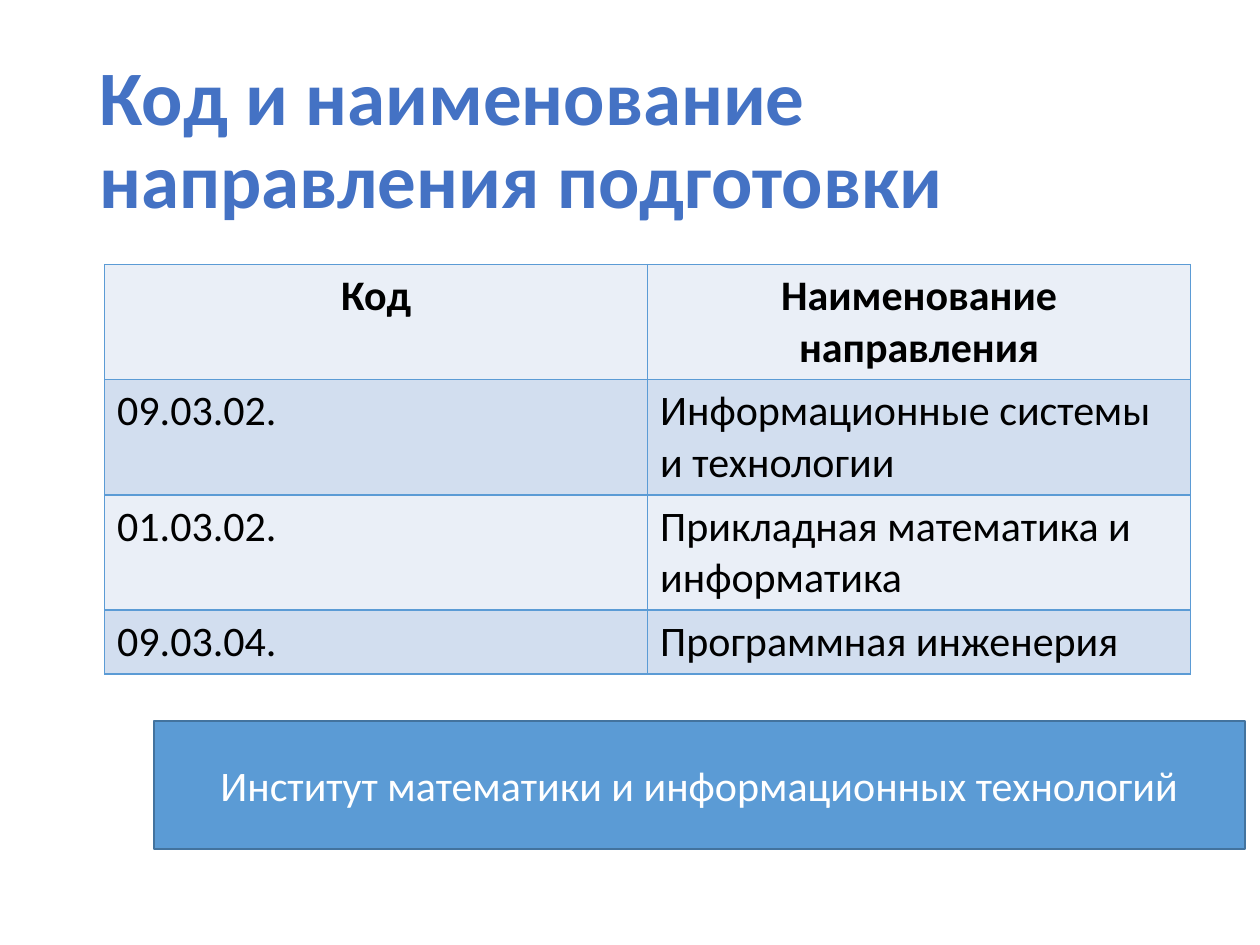
from pptx import Presentation
from pptx.dml.color import RGBColor
from pptx.enum.shapes import MSO_SHAPE as Shape
from pptx.enum.text import MSO_ANCHOR as Anchor, PP_ALIGN as Align
from pptx.oxml import parse_xml
from pptx.oxml.ns import nsdecls
from pptx.util import Inches, Pt

COLORS = {
    "title": "4472C4",
    "accent": "5B9BD5",
    "outline": "43739E",
    "light": "EAEFF7",
    "band": "D2DEEF",
    "text": "000000",
    "white": "FFFFFF",
}
DIRECTIONS = [
    ("Код", "Наименование направления"),
    ("09.03.02.", "Информационные системы и технологии"),
    ("01.03.02.", "Прикладная математика и информатика"),
    ("09.03.04.", "Программная инженерия"),
]
ROW_HEIGHTS = [0.91, 0.91, 0.91, 0.5]


def color(name):
    return RGBColor.from_string(COLORS[name])


def write(frame, text, size=24, ink="text", bold=False, align=Align.LEFT,
          anchor=Anchor.TOP, spacing=1.0):
    frame.word_wrap = True
    frame.vertical_anchor = anchor
    paragraph = frame.paragraphs[0]
    paragraph.alignment = align
    paragraph.line_spacing = spacing
    run = paragraph.add_run()
    run.text = text
    run.font.name = "Calibri"
    run.font.size = Pt(size)
    run.font.bold = bold
    run.font.color.rgb = color(ink)


class DirectionSlide:
    """Holds the style and the current slide, and adds its elements."""

    def __init__(self, presentation):
        self.slide = presentation.slides.add_slide(presentation.slide_layouts[5])

    def title(self, text, left, top, width, height):
        shape = self.slide.shapes.title
        shape.left, shape.top = Inches(left), Inches(top)
        shape.width, shape.height = Inches(width), Inches(height)
        write(shape.text_frame, text, size=44, ink="title", bold=True,
              anchor=Anchor.MIDDLE, spacing=0.9)

    def border(self, cell):
        properties = cell._tc.get_or_add_tcPr()
        for index, side in enumerate(("lnL", "lnR", "lnT", "lnB")):
            properties.insert(index, parse_xml(
                f'<a:{side} {nsdecls("a")} w="{Pt(1)}"><a:solidFill>'
                f'<a:srgbClr val="{COLORS["accent"]}"/></a:solidFill></a:{side}>'))

    def table(self, rows, heights, left, top, width):
        columns = len(rows[0])
        frame = self.slide.shapes.add_table(
            len(rows), columns, Inches(left), Inches(top),
            Inches(width), Inches(sum(heights)))
        table = frame.table
        for column in table.columns:
            column.width = Inches(width / columns)
        for index, (texts, height) in enumerate(zip(rows, heights)):
            table.rows[index].height = Inches(height)
            header = index == 0
            for cell, text in zip(table.rows[index].cells, texts):
                cell.fill.solid()
                cell.fill.fore_color.rgb = color("band" if index % 2 else "light")
                self.border(cell)
                write(cell.text_frame, text, bold=header,
                      align=Align.CENTER if header else Align.LEFT)

    def banner(self, text, left, top, width, height):
        shape = self.slide.shapes.add_shape(
            Shape.RECTANGLE, Inches(left), Inches(top), Inches(width), Inches(height))
        shape.shadow.inherit = False
        shape.fill.solid()
        shape.fill.fore_color.rgb = color("accent")
        shape.line.color.rgb = color("outline")
        shape.line.width = Pt(1)
        write(shape.text_frame, text, ink="white", align=Align.CENTER,
              anchor=Anchor.MIDDLE)


def main():
    presentation = Presentation()
    presentation.slide_width = Inches(10)
    presentation.slide_height = Inches(7.5)
    slide = DirectionSlide(presentation)
    slide.title("Код и наименование направления подготовки", 0.69, 0.4, 8.62, 1.45)
    slide.table(DIRECTIONS, ROW_HEIGHTS, 0.83, 2.1, 8.62)
    slide.banner("Институт математики и информационных технологий",
                 1.22, 5.72, 8.66, 1.02)
    presentation.save("out.pptx")


if __name__ == "__main__":
    main()
